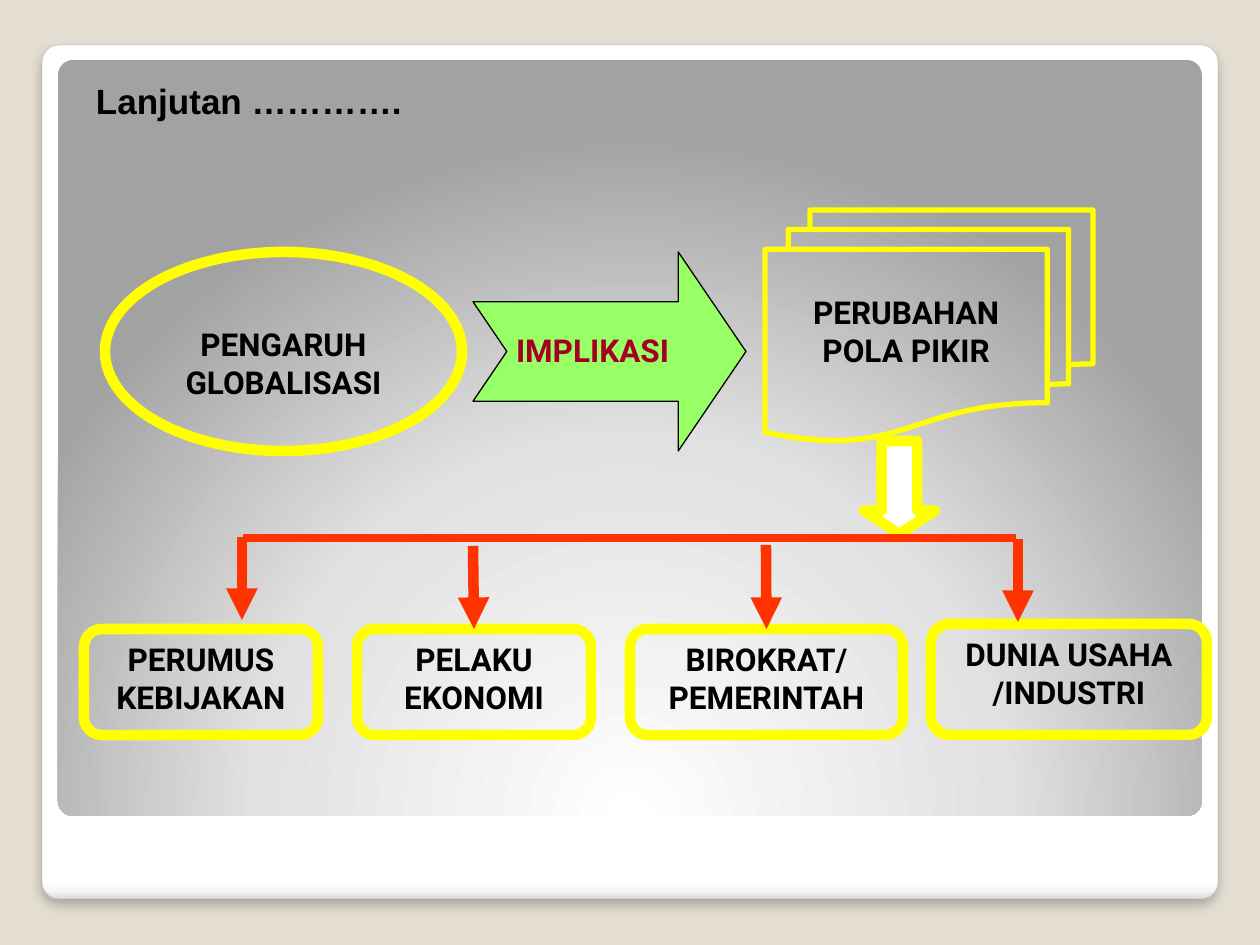
from lxml import etree
from pptx import Presentation
from pptx.dml.color import RGBColor
from pptx.enum.shapes import MSO_CONNECTOR, MSO_SHAPE
from pptx.enum.text import MSO_ANCHOR, PP_ALIGN
from pptx.oxml import parse_xml
from pptx.oxml.ns import nsdecls, qn
from pptx.util import Pt

PX = 914400 / 126
ROUND = MSO_SHAPE.ROUNDED_RECTANGLE
STRAIGHT = MSO_CONNECTOR.STRAIGHT
TOP, MIDDLE = MSO_ANCHOR.TOP, MSO_ANCHOR.MIDDLE
LEFT, CENTER = PP_ALIGN.LEFT, PP_ALIGN.CENTER
rgb = RGBColor.from_string


def px(*lengths):
    return [round(v * PX) for v in lengths]


def write(shape, text, size, font, color, align, anchor=TOP, top=6):
    tf = shape.text_frame
    tf.text = text
    tf.word_wrap = True
    tf.vertical_anchor = anchor
    tf.margin_left, tf.margin_right, tf.margin_top, tf.margin_bottom = px(12, 12, top, 6)
    p = tf.paragraphs[0]
    p.alignment = align
    f = p.runs[0].font
    f.size, f.name, f.bold, f.color.rgb = Pt(size), font, True, rgb(color)


prs = Presentation()
prs.slide_width, prs.slide_height = px(1260, 945)
s = prs.slides.add_slide(prs.slide_layouts[5])
s.background.fill.solid()
s.background.fill.fore_color.rgb = rgb("E3DED1")

# White card and grey panel, both with gradients
LINEAR = '<a:lin ang="5400000" scaled="0"/>'
RADIAL = '<a:path path="circle"><a:fillToRect l="50000" t="175000" r="50000" b="-75000"/></a:path>'
panels = [
    ((42, 45, 1176, 854), [(0, "FFFFFF"), (98, "FFFFFF"), (99, "F7F7F7"), (100, "DADADA")], LINEAR),
    ((58, 60, 1144, 756), [(0, "FFFFFF"), (55, "E1E1E1"), (100, "A2A2A2")], RADIAL),
]
cards = []
for box, stops, direction in panels:
    sp = s.shapes.add_shape(ROUND, *px(*box))
    sp.adjustments[0] = 0.02
    sp.line.fill.background()
    sp.shadow.inherit = False
    gs = "".join(f'<a:gs pos="{pos * 1000}"><a:srgbClr val="{c}"/></a:gs>' for pos, c in stops)
    sp._element.spPr.find(qn("a:prstGeom")).addnext(parse_xml(
        f'<a:gradFill {nsdecls("a")} rotWithShape="1"><a:gsLst>{gs}</a:gsLst>{direction}</a:gradFill>'))
    cards.append(sp)

# Outline and soft shadow of the white card
card = cards[0]
card.line.color.rgb = rgb("A4A4A4")
card.line.width = Pt(0.16)
card._element.spPr.find(qn("a:effectLst")).append(parse_xml(
    f'<a:outerShdw {nsdecls("a")} blurRad="{Pt(6)}" dist="{Pt(4)}" dir="5400000" rotWithShape="0">'
    '<a:srgbClr val="000000"><a:alpha val="25000"/></a:srgbClr></a:outerShdw>'))

# Title, brought in front of the panels
title = s.shapes.title
title.left, title.top, title.width, title.height = px(84, 73, 357, 55)
write(title, "Lanjutan ………….", 20, "Arial", "000000", LEFT, MIDDLE)
s.shapes._spTree.append(title._element)

# Yellow outlined shapes: kind, box, line width, text, top inset
outlined = [
    (MSO_SHAPE.OVAL, (105, 252, 357, 199), 6, "PENGARUH GLOBALISASI", 44),
    (MSO_SHAPE.FLOWCHART_MULTIDOCUMENT, (765, 210, 328, 231), 3, "PERUBAHAN POLA PIKIR", 44),
    (ROUND, (84, 629, 234, 106), 6, "PERUMUS KEBIJAKAN", 6),
    (ROUND, (357, 629, 234, 106), 6, "PELAKU EKONOMI", 6),
    (ROUND, (630, 629, 273, 106), 6, "BIROKRAT/ PEMERINTAH", 6),
    (ROUND, (931, 624, 276, 111), 6, "DUNIA USAHA /INDUSTRI", 6),
]
boxes = {}
for kind, box, width, text, top in outlined:
    sp = s.shapes.add_shape(kind, *px(*box))
    sp.fill.background()
    sp.line.color.rgb = rgb("FFFF00")
    sp.line.width = Pt(width)
    sp.shadow.inherit = False
    write(sp, text, 18, "Roboto", "000000", CENTER, top=top)
    boxes[text] = sp

# Block arrows: kind, box, head length, fill, line, line width
block_arrows = [
    (MSO_SHAPE.DOWN_ARROW, (864, 441, 71, 93), 0.33, "FFFFFF", "FFFF00", 6),
    (MSO_SHAPE.NOTCHED_RIGHT_ARROW, (473, 252, 273, 199), 0.34, "99FF66", "000000", 0.75),
]
for kind, box, head, fill, line, width in block_arrows:
    sp = s.shapes.add_shape(kind, *px(*box))
    sp.adjustments[1] = head
    sp.fill.solid()
    sp.fill.fore_color.rgb = rgb(fill)
    sp.line.color.rgb = rgb(line)
    sp.line.width = Pt(width)
    sp.shadow.inherit = False

# Red bar and its four arrows: ends, width, arrowhead, box joined at its top
connectors = [
    ((243, 538, 1016, 538), 4.5, False, None),
    ((1018, 539, 1018, 622), 6, True, None),
    ((473, 546, 474, 629), 6, True, "PELAKU EKONOMI"),
    ((766, 545, 766, 629), 6, True, "BIROKRAT/ PEMERINTAH"),
    ((242, 537, 242, 620), 6, True, None),
]
for ends, width, arrow, target in connectors:
    c = s.shapes.add_connector(STRAIGHT, *px(*ends))
    c.line.color.rgb = rgb("FF3300")
    c.line.width = Pt(width)
    if arrow:
        etree.SubElement(c.line._get_or_add_ln(), qn("a:tailEnd"), type="triangle")
    etree.SubElement(c._element.spPr, qn("a:effectLst"))
    if target:
        c.end_connect(boxes[target], 0)

# Label on the green arrow
label = s.shapes.add_textbox(*px(504, 325, 221, 50))
write(label, "IMPLIKASI", 18, "Roboto", "A50021", LEFT)

prs.save("out.pptx")
